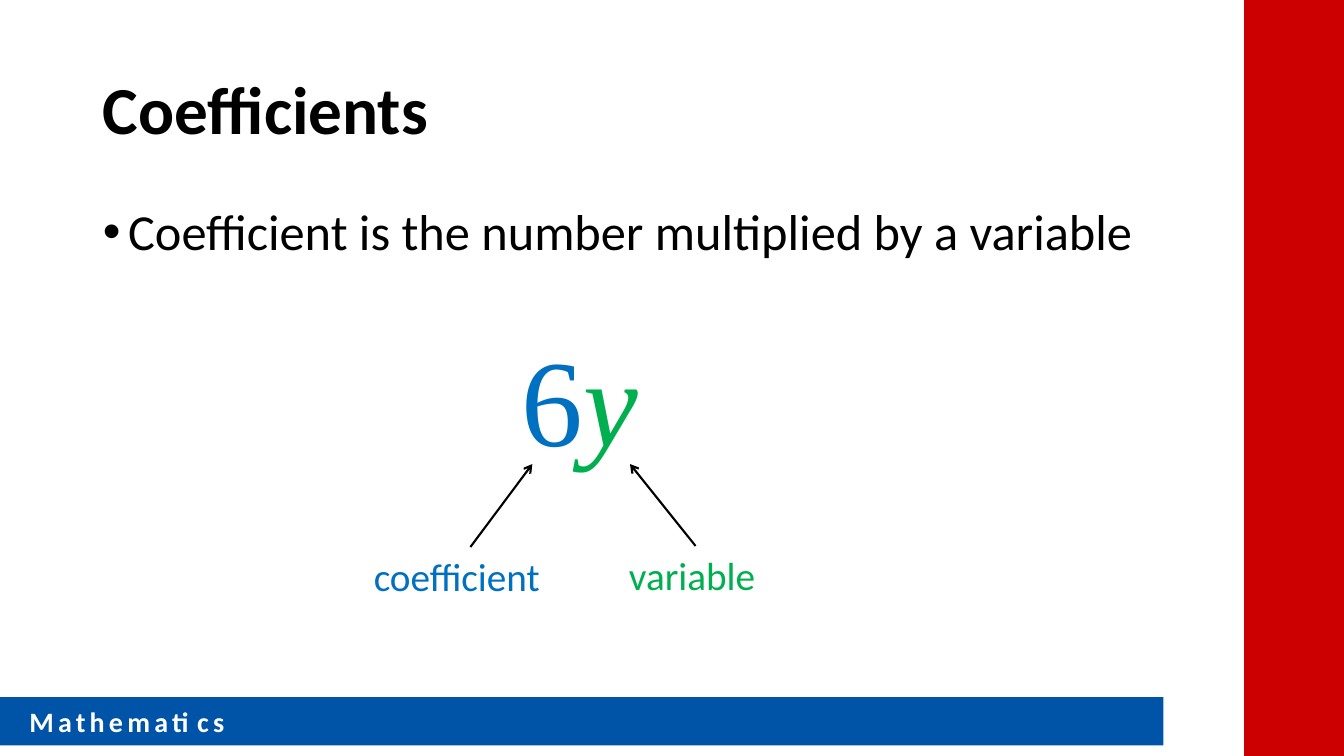
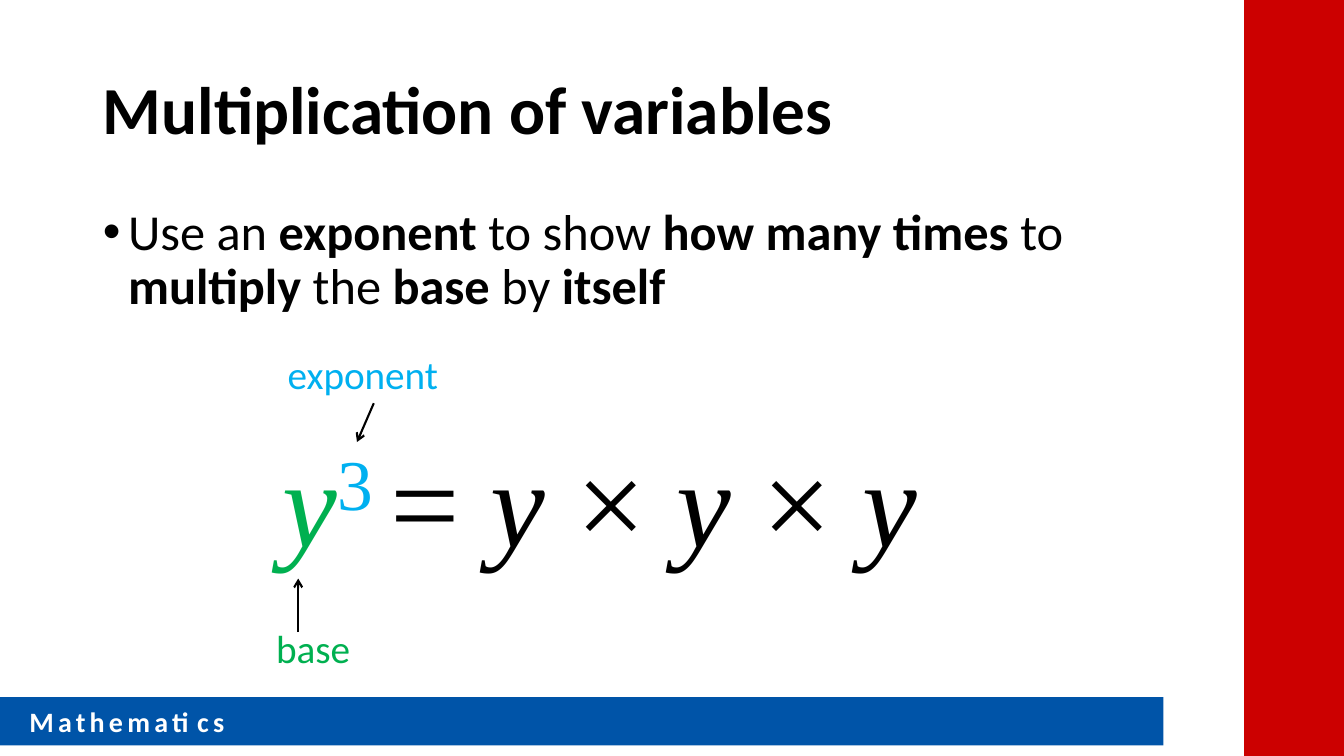
from dataclasses import dataclass

from lxml import etree
from pptx import Presentation
from pptx.dml.color import RGBColor
from pptx.enum.shapes import MSO_CONNECTOR, MSO_SHAPE
from pptx.enum.text import MSO_ANCHOR, PP_ALIGN
from pptx.oxml.ns import qn
from pptx.util import Emu, Pt

RECT = MSO_SHAPE.RECTANGLE
LINE = MSO_CONNECTOR.STRAIGHT
MIDDLE, TOP = MSO_ANCHOR.MIDDLE, MSO_ANCHOR.TOP
LEFT = PP_ALIGN.LEFT
UPPER, LOWER = 0, 2  # connection sites of a rectangle
PX = 9525  # EMU in one px
WIDE, HIGH = 1280, 720


@dataclass(frozen=True)
class Theme:
    sans: str = "Calibri"
    serif: str = "Times New Roman"
    ink: str = "000000"
    white: str = "FFFFFF"
    band: str = "0054A8"
    side: str = "CC0000"
    blue: str = "0070C0"
    green: str = "00B050"
    sky: str = "00B0F0"
    title: int = 48
    body: int = 36
    math: int = 88
    label: int = 28
    foot: int = 20


def px(*vals):
    return [Emu(v * PX) for v in vals]


def rgb(color):
    return RGBColor.from_string(color)


class Deck:
    def __init__(self, theme):
        self.theme = theme
        self.prs = Presentation()
        self.prs.slide_width, self.prs.slide_height = px(WIDE, HIGH)
        self.slide = None

    def start(self, title):
        """Add a slide with its bands, footer and title."""
        t = self.theme
        self.slide = self.prs.slides.add_slide(self.prs.slide_layouts[6])
        foot = self.band(0, 664, 1108, 46, t.band)
        self.band(1185, 0, 95, HIGH, t.side)
        para = self.frame(foot, MIDDLE, left=28)
        self.style(para, t.foot, t.white, bold=True)
        run = para.add_run()
        run.text = "Mathematics"
        run._r.get_or_add_rPr().set("spc", "300")
        para = self.frame(self.box(88, 38, 1081, 139), MIDDLE)
        para.line_spacing = 0.9
        self.style(para, t.title, t.ink, bold=True)
        para.add_run().text = title

    def band(self, x, y, w, h, fill):
        shape = self.slide.shapes.add_shape(RECT, *px(x, y, w, h))
        shape.shadow.inherit = False
        shape.fill.solid()
        shape.fill.fore_color.rgb = rgb(fill)
        shape.line.fill.background()
        return shape

    def box(self, x, y, w, h):
        return self.slide.shapes.add_textbox(*px(x, y, w, h))

    def frame(self, shape, anchor=TOP, left=10):
        """Prepare the text frame and give its first paragraph."""
        frame = shape.text_frame
        frame.word_wrap = True
        frame.vertical_anchor = anchor
        frame.margin_left = Emu(left * PX)
        para = frame.paragraphs[0]
        para.alignment = LEFT
        return para

    def style(self, para, size, color=None, face=None, bold=None):
        font = para.font
        font.name = face or self.theme.sans
        font.size = Pt(size)
        font.bold = bold
        if color:
            font.color.rgb = rgb(color)

    def bullet(self, h, *parts):
        """Write a bullet; every second part is bold."""
        para = self.frame(self.box(88, 192, 1081, h))
        para.line_spacing = 0.9
        para.space_after = Pt(6)
        props = para._p.get_or_add_pPr()
        props.set("marL", str(24 * PX))
        props.set("indent", str(-24 * PX))
        etree.SubElement(props, qn("a:buFont")).set("typeface", "Arial")
        etree.SubElement(props, qn("a:buChar")).set("char", "•")
        self.style(para, self.theme.body, self.theme.ink)
        for i, part in enumerate(parts):
            run = para.add_run()
            run.text = part
            if i % 2:
                run.font.bold = True

    def math(self, x, y, w, *parts):
        """Write a formula from (text, colour, raised); letters slant."""
        para = self.frame(self.box(x, y, w, 152))
        self.style(para, self.theme.math, face=self.theme.serif)
        for text, color, raised in parts:
            run = para.add_run()
            run.text = text
            run.font.italic = text.strip().isalpha()
            run.font.color.rgb = rgb(color)
            if raised:
                run._r.get_or_add_rPr().set("baseline", "30000")

    def label(self, x, y, w, text, color):
        shape = self.box(x, y, w, 55)
        para = self.frame(shape)
        self.style(para, self.theme.label, color)
        para.add_run().text = text
        return shape

    def arrow(self, x1, y1, x2, y2, source=None, site=UPPER):
        line = self.slide.shapes.add_connector(LINE, *px(x1, y1, x2, y2))
        if source is not None:
            line.begin_connect(source, site)
        line.line.width = Pt(1.5)
        line.line.color.rgb = rgb(self.theme.ink)
        props = line._element.spPr
        tail = etree.SubElement(props.find(qn("a:ln")), qn("a:tailEnd"))
        tail.set("type", "arrow")
        etree.SubElement(props, qn("a:effectLst"))


def factor(deck):
    t = deck.theme
    deck.start("Coefficients")
    deck.bullet(92, "Coefficient is the number multiplied by a variable")
    deck.math(487, 303, 178, ("6", t.blue, False), ("y", t.green, False))
    # Labels with arrows to the parts of the term
    left = deck.label(346, 521, 204, "coefficient", t.blue)
    right = deck.label(589, 520, 147, "variable", t.green)
    deck.arrow(448, 521, 507, 442, left)
    deck.arrow(662, 520, 600, 442, right)


def power(deck):
    t = deck.theme
    deck.start("Multiplication of variables")
    deck.bullet(457, "Use an", " exponent ", "to show ", "how many times ",
                "to ", "multiply", " the ", "base", " by ", "itself")
    rest = [(s, t.ink, False) for s in ("= ", "y ", "×", " y ", "×", " y")]
    deck.math(259, 399, 792, ("y", t.green, False), ("3 ", t.sky, True), *rest)
    # Labels with arrows to base and exponent
    deck.label(253, 590, 113, "base", t.green)
    deck.arrow(284, 602, 284, 551)
    top = deck.label(264, 329, 184, "exponent", t.sky)
    deck.arrow(356, 384, 340, 421, top, LOWER)


def main():
    deck = Deck(Theme())
    factor(deck)
    power(deck)
    deck.prs.save("out.pptx")


if __name__ == "__main__":
    main()
